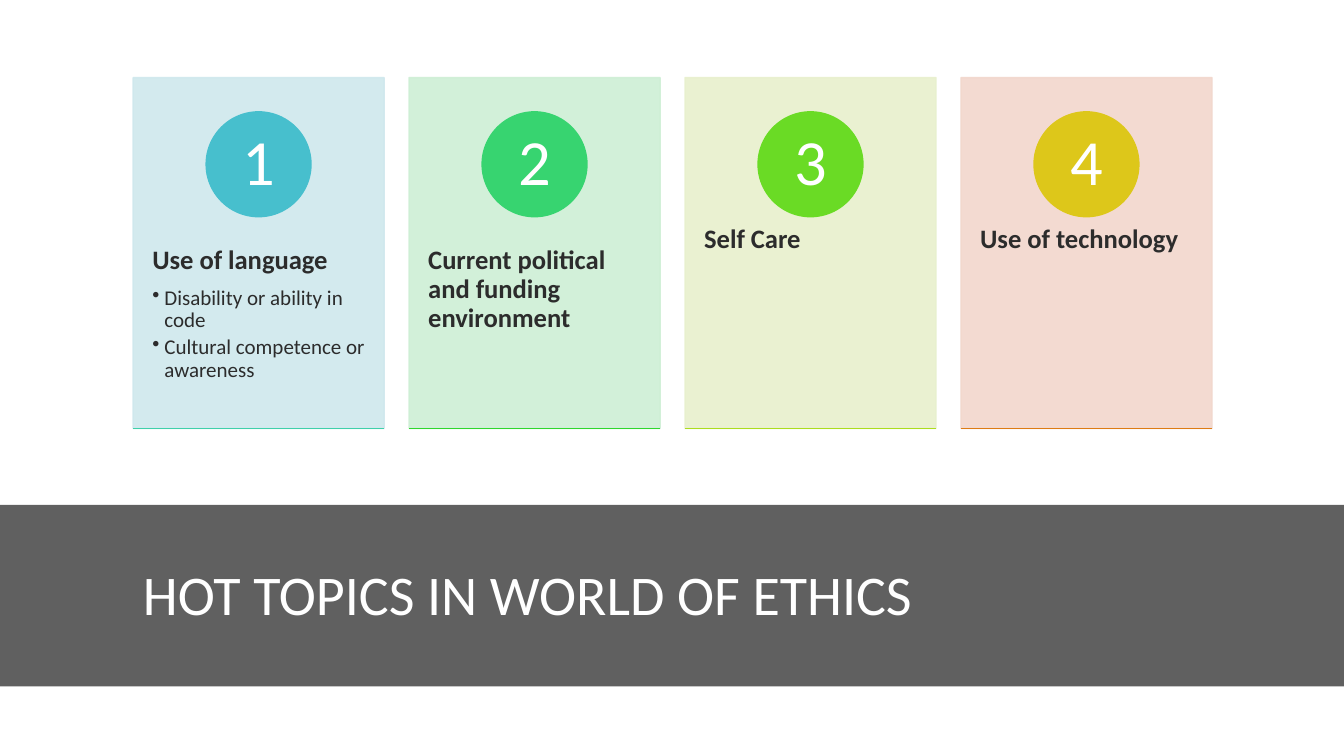
from dataclasses import dataclass

from lxml import etree
from pptx import Presentation
from pptx.dml.color import RGBColor
from pptx.enum import shapes, text
from pptx.oxml.ns import qn
from pptx.util import Inches, Pt


@dataclass(frozen=True)
class Theme:
    font: str = "Calibri"
    band: str = "606060"
    light: str = "FFFFFF"
    dark: str = "2C2C2C"
    title_size: int = 40
    number_size: int = 46
    heading_size: int = 19
    bullet_size: int = 15
    cards: tuple = ("CFE8ED", "CEEFD5", "E8F0CD", "F2D7CC")
    circles: tuple = ("47BFCD", "37D470", "6ADB25", "DDC71A")
    rules: tuple = ("3FD0AA", "2FD72E", "ACDD1F", "DD7C15")


theme = Theme()
topics = [
    ("Use of language",
     ["Disability or ability in code", "Cultural competence or awareness"]),
    ("Current political and funding environment", []),
    ("Self Care", []),
    ("Use of technology", []),
]


def add_filled(preset, left, top, width, height, color, alpha=None):
    """Add a shape with matching fill and line, optionally translucent (alpha in percent)."""
    shape = slide.shapes.add_shape(
        preset, Inches(left), Inches(top), Inches(width), Inches(height))
    shape.shadow.inherit = False
    shape.fill.solid()
    shape.fill.fore_color.rgb = RGBColor.from_string(color)
    shape.line.color.rgb = RGBColor.from_string(color)
    shape.line.width = Pt(1)
    if alpha:
        for swatch in shape._element.spPr.iter(qn("a:srgbClr")):
            etree.SubElement(swatch, qn("a:alpha"), val=str(alpha * 1000))
    return shape


def style(paragraph, size, color, bold=False, spacing=0.9, after=0):
    paragraph.line_spacing = spacing
    paragraph.space_after = Pt(after)
    for run in paragraph.runs:
        run.font.name = theme.font
        run.font.size = Pt(size)
        run.font.bold = bold
        run.font.color.rgb = RGBColor.from_string(color)


deck = Presentation()
deck.slide_width, deck.slide_height = Inches(13.33), Inches(7.5)
slide = deck.slides.add_slide(deck.slide_layouts[6])

# Title band
band = add_filled(shapes.MSO_SHAPE.RECTANGLE, 0, 5.01, 13.33, 1.8, theme.band)
band.line.fill.background()
title = slide.shapes.add_textbox(
    Inches(1.32), Inches(5.11), Inches(10.7), Inches(1.65)).text_frame
title.word_wrap = True
title.vertical_anchor = text.MSO_ANCHOR.MIDDLE
title.text = "HOT TOPICS IN WORLD OF ETHICS"
style(title.paragraphs[0], theme.title_size, theme.light, spacing=0.85)

# Topic cards
first_left, card_top, card_width, card_height = 1.32, 0.77, 2.49, 3.48
pitch, circle_size = 2.737, 1.04
card_bottom = card_top + card_height

for index, (heading, bullets) in enumerate(topics):
    left = first_left + index * pitch
    add_filled(shapes.MSO_SHAPE.RECTANGLE, left, card_top, card_width, card_height,
               theme.cards[index], alpha=90)

    body = slide.shapes.add_textbox(
        Inches(left), Inches(2.09), Inches(card_width), Inches(2.09)).text_frame
    body.word_wrap = True
    body.margin_left = body.margin_right = Inches(0.19)
    body.margin_top = body.margin_bottom = Inches(0.36)
    body.text = heading
    style(body.paragraphs[0], theme.heading_size, theme.dark, bold=True, after=8)
    for bullet in bullets:
        item = body.add_paragraph()
        item.text = bullet
        item.level = 1
        style(item, theme.bullet_size, theme.dark, after=3)
        properties = item._p.get_or_add_pPr()
        properties.set("marL", str(Inches(0.12)))
        properties.set("indent", str(Inches(-0.12)))
        etree.SubElement(properties, qn("a:buChar"), char="•")

    circle = add_filled(shapes.MSO_SHAPE.OVAL, left + (card_width - circle_size) / 2, 1.11,
                        circle_size, circle_size, theme.circles[index])
    number = circle.text_frame
    number.margin_left = number.margin_right = Inches(0.08)
    number.margin_top = number.margin_bottom = Inches(0.01)
    number.vertical_anchor = text.MSO_ANCHOR.MIDDLE
    number.text = str(index + 1)
    number.paragraphs[0].alignment = text.PP_ALIGN.CENTER
    style(number.paragraphs[0], theme.number_size, theme.light)

    rule = slide.shapes.add_connector(
        shapes.MSO_CONNECTOR.STRAIGHT, Inches(left), Inches(card_bottom),
        Inches(left + card_width), Inches(card_bottom))
    rule.line.color.rgb = RGBColor.from_string(theme.rules[index])
    rule.line.width = Pt(1)
    etree.SubElement(rule._element.spPr, qn("a:effectLst"))

deck.save("out.pptx")
